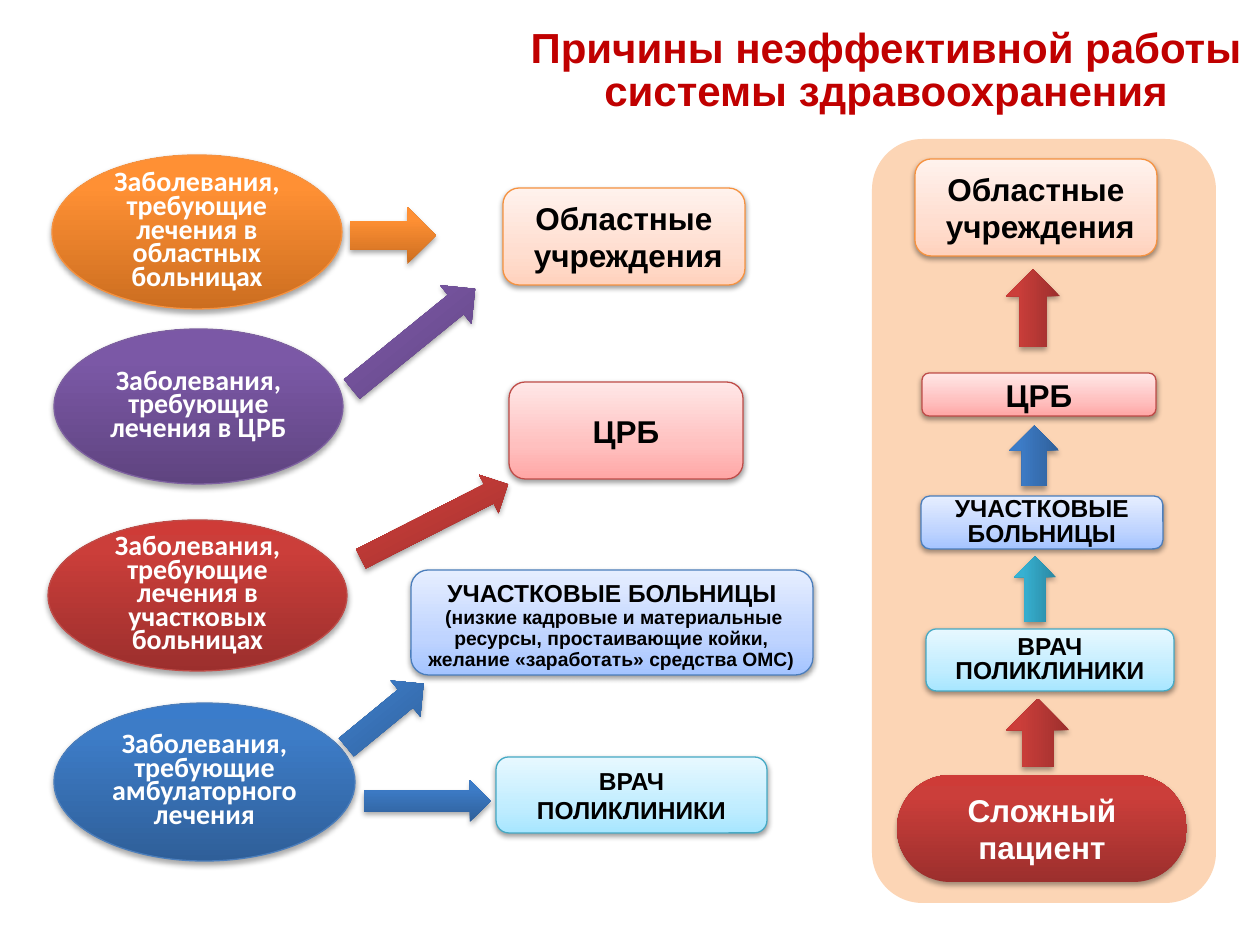
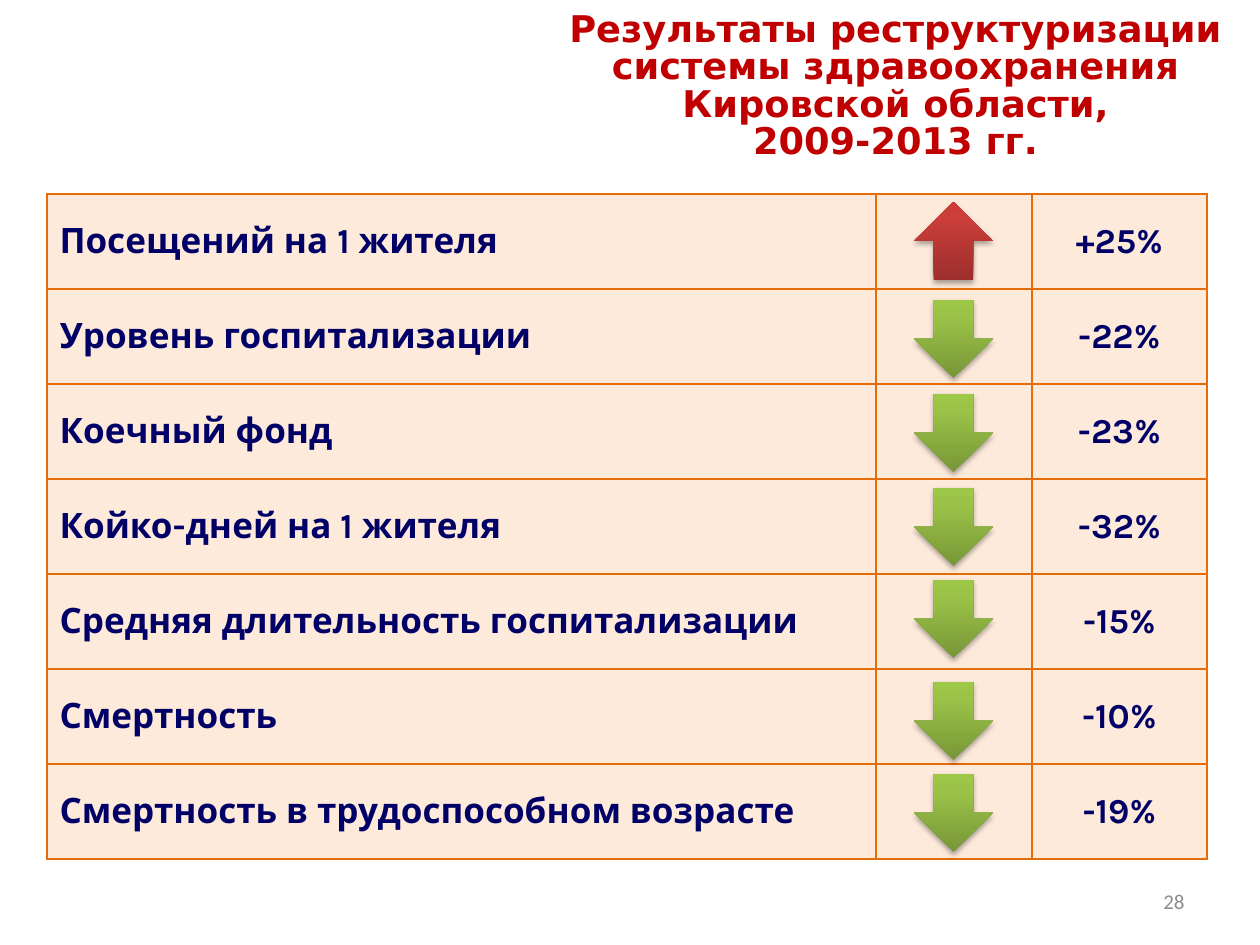
import copy

import pptx
import pptx.dml.color
import pptx.enum.shapes
import pptx.enum.text
import pptx.oxml
import pptx.oxml.ns
import pptx.util

RGBColor = pptx.dml.color.RGBColor
SHAPE = pptx.enum.shapes.MSO_SHAPE
ALIGN = pptx.enum.text.PP_ALIGN
ANCHOR = pptx.enum.text.MSO_ANCHOR
Pt = pptx.util.Pt
qn = pptx.oxml.ns.qn

PX = 914400 / 126  # EMU in one px

# Colours
TITLE_RED = RGBColor(0xC0, 0x00, 0x00)
WHITE = RGBColor(0xFF, 0xFF, 0xFF)
BLACK = RGBColor(0x00, 0x00, 0x00)
NAVY = RGBColor(0x00, 0x00, 0x66)
GRAY = RGBColor(0x8C, 0x8C, 0x8C)
PEACH = RGBColor(0xFC, 0xD5, 0xB5)
CELL_PEACH = RGBColor(0xFD, 0xEA, 0xDA)
BORDER_ORANGE = RGBColor(0xE4, 0x6C, 0x0A)


def colors(codes):
    return [RGBColor.from_string(code) for code in codes.split()]


# Gradient stops, from the bottom of a shape to its top
DEEP = {
    "orange": colors("CC6E20 FF9034 FF9136"),
    "purple": colors("5F4480 7B58A6 7C57A8"),
    "red": colors("9C2F2D CB3E3A CE3B37"),
    "blue": colors("2F5F99 3D7CC7 3A7CCB"),
    "teal": colors("2A88A2 37B1D2 34B4D6"),
    "green": colors("779737 9BC348 9DC746"),
}
PALE = {
    "orange": colors("FFD2BD FFDED0 FFF2ED"),
    "red": colors("FFA6A5 FFC0BF FFE7E7"),
    "blue": colors("A4C4FF BFD4FF E6EEFF"),
    "teal": colors("A7E6FF C1EDFF E7F8FF"),
}
OUTLINE = dict(zip(("orange", "purple", "red", "blue", "teal"),
                   colors("F69240 7D60A0 BF4C48 4B7EBC 46AAC5")))

# Slide 1: boxes are left, top, width, height in px
CAUSES_TITLE = ["Причины неэффективной работы системы здравоохранения"]
PANEL_BOX = (872, 139, 344, 764)
DISEASES = [
    ((54, 703, 301, 158), "blue", "Заболевания, требующие амбулаторного лечения"),
    ((48, 520, 299, 151), "red", "Заболевания, требующие лечения в участковых больницах"),
    ((54, 329, 289, 155), "purple", "Заболевания, требующие лечения в ЦРБ"),
    ((52, 155, 290, 154), "orange", "Заболевания, требующие лечения в областных больницах"),
]
FLOW_ARROWS = [  # box, colour, rotation
    ((350, 207, 86, 57), "orange", 0),
    ((334, 314, 159, 50), "purple", 320.9),
    ((352, 500, 165, 43), "red", 333.1),
    ((335, 692, 100, 47), "blue", 320.6),
    ((364, 780, 127, 42), "blue", 0),
    ((994, 281, 78, 54), "red", 270),
    ((1004, 431, 61, 50), "blue", 270),
    ((1002, 568, 66, 42), "teal", 270),
    ((1004, 701, 68, 63), "red", 270),
]
PATIENT_BOX = (897, 775, 290, 107)
REGIONAL = ["Областные", " учреждения"]
DISTRICT = ["УЧАСТКОВЫЕ БОЛЬНИЦЫ"]
DOCTOR = ["ВРАЧ\nПОЛИКЛИНИКИ"]
FACILITIES = [  # box, colour, paragraphs, text size, line spacing
    ((503, 188, 242, 97), "orange", REGIONAL, 18, None),
    ((509, 382, 234, 97), "red", ["ЦРБ"], 18, None),
    ((496, 757, 271, 76), "teal", DOCTOR, 14, None),
    ((926, 629, 248, 62), "teal", DOCTOR, 14, Pt(14)),
    ((915, 159, 242, 97), "orange", REGIONAL, 18, None),
    ((922, 373, 234, 43), "red", ["ЦРБ"], 18, None),
    ((921, 496, 242, 53), "blue", DISTRICT, 14, Pt(14)),
]
DISTRICT_BOX = (411, 570, 402, 105)
DISTRICT_NOTE_BOX = (410, 601, 403, 77)
DISTRICT_NOTE = [" (низкие кадровые и материальные ресурсы, простаивающие койки, "
                 "желание «заработать» средства ОМС)"]

# Slide 2
RESULTS_TITLE = ["Результаты реструктуризации системы здравоохранения Кировской области,",
                 "2009-2013 гг."]
RESULTS = [  # indicator, change, gap from row top to arrow
    ("Посещений на 1 жителя", "+25%", 8),
    ("Уровень госпитализации", "-22%", 11),
    ("Коечный фонд", "-23%", 10),
    ("Койко-дней на 1 жителя", "-32%", 9),
    ("Средняя длительность госпитализации", "-15%", 6),
    ("Смертность", "-10%", 13),
    ("Смертность в трудоспособном возрасте", "-19%", 10),
]
TABLE_LEFT, TABLE_TOP, ROW_HEIGHT = 47, 194, 95
COLUMN_WIDTHS = (829, 156, 175)
ARROW_WIDTH, ARROW_HEIGHT = 79, 78


def px(value):
    return round(value * PX)


def write(frame, paragraphs, size, color, font="Arial", bold=True,
          align=ALIGN.CENTER, anchor=ANCHOR.MIDDLE, spacing=None):
    frame.word_wrap = True
    frame.vertical_anchor = anchor
    for index, text in enumerate(paragraphs):
        paragraph = frame.add_paragraph() if index else frame.paragraphs[0]
        paragraph.alignment = align
        if spacing:
            paragraph.line_spacing = spacing
        for number, line in enumerate(text.split("\n")):
            if number:
                paragraph.add_line_break()
            run = paragraph.add_run()
            run.text = line
            run.font.name = font
            run.font.size = Pt(size)
            run.font.bold = bold
            run.font.color.rgb = color


def add_text(slide, box, paragraphs, size, color, **style):
    shape = slide.shapes.add_textbox(*map(px, box))
    write(shape.text_frame, paragraphs, size, color, **style)


def add_title(slide, box, paragraphs, size, **style):
    add_text(slide, box, paragraphs, size, TITLE_RED, spacing=0.85, **style)


def add_plain(slide, kind, box):
    shape = slide.shapes.add_shape(kind, *map(px, box))
    shape.shadow.inherit = False
    shape.line.fill.background()
    return shape


def add_glossy(slide, kind, box, stops, middle=0.8, outline=None, shadow=(35, 23000)):
    """Shape with a three-stop vertical gradient and a soft shadow below."""
    shape = add_plain(slide, kind, box)
    shape.fill.gradient()
    shape.fill.gradient_angle = 90
    stop_list = shape.element.spPr.find(qn("a:gradFill")).find(qn("a:gsLst"))
    stop_list.append(copy.deepcopy(stop_list[0]))
    for stop, position, color in zip(shape.fill.gradient_stops, (0, middle, 1), stops):
        stop.position = position
        stop.color.rgb = color
    if outline:
        shape.line.color.rgb = outline
        shape.line.width = Pt(0.75)
    opacity, distance = shadow
    shape.element.spPr.find(qn("a:effectLst")).append(pptx.oxml.parse_xml(
        f'<a:outerShdw {pptx.oxml.ns.nsdecls("a")} blurRad="40000" dist="{distance}" '
        f'dir="5400000" rotWithShape="0"><a:srgbClr val="000000">'
        f'<a:alpha val="{opacity * 1000}"/></a:srgbClr></a:outerShdw>'))
    return shape


def add_facility(slide, box, color):
    return add_glossy(slide, SHAPE.ROUNDED_RECTANGLE, box, PALE[color], 0.35,
                      OUTLINE[color], (38, 20000))


def add_borders(cell):
    properties = cell._tc.get_or_add_tcPr()
    for index, side in enumerate(("lnL", "lnR", "lnT", "lnB")):
        properties.insert(index, pptx.oxml.parse_xml(
            f'<a:{side} {pptx.oxml.ns.nsdecls("a")} w="12700"><a:solidFill>'
            f'<a:srgbClr val="{BORDER_ORANGE}"/></a:solidFill></a:{side}>'))


def build_causes(slide):
    panel = add_plain(slide, SHAPE.ROUNDED_RECTANGLE, PANEL_BOX)
    panel.adjustments[0] = 0.147
    panel.fill.solid()
    panel.fill.fore_color.rgb = PEACH

    # Groups of diseases and the patient flows
    for box, color, text in DISEASES:
        ellipse = add_glossy(slide, SHAPE.OVAL, box, DEEP[color], outline=OUTLINE[color])
        write(ellipse.text_frame, [text], 16, WHITE, font="Calibri", spacing=0.7)
    for box, color, rotation in FLOW_ARROWS:
        add_glossy(slide, SHAPE.RIGHT_ARROW, box, DEEP[color]).rotation = rotation

    add_title(slide, (512, 0, 748, 145), CAUSES_TITLE, 24)

    # Patient and medical facilities
    patient = add_glossy(slide, SHAPE.ROUNDED_RECTANGLE, PATIENT_BOX, DEEP["red"])
    patient.adjustments[0] = 0.5
    write(patient.text_frame, ["Сложный\nпациент"], 18, WHITE)
    for box, color, paragraphs, size, spacing in FACILITIES:
        facility = add_facility(slide, box, color)
        write(facility.text_frame, paragraphs, size, BLACK, spacing=spacing)

    # District hospitals with a note under the heading
    district = add_facility(slide, DISTRICT_BOX, "blue")
    district.text_frame.margin_top = px(3)
    write(district.text_frame, DISTRICT, 14, BLACK, anchor=ANCHOR.TOP)
    add_text(slide, DISTRICT_NOTE_BOX, DISTRICT_NOTE, 11, BLACK,
             anchor=ANCHOR.TOP, spacing=Pt(12))


def build_results(slide):
    add_text(slide, (903, 876, 294, 50), ["28"], 12, GRAY, font="Calibri",
             bold=False, align=ALIGN.RIGHT)

    # Table of indicators
    table = slide.shapes.add_table(
        len(RESULTS), len(COLUMN_WIDTHS), px(TABLE_LEFT), px(TABLE_TOP),
        px(sum(COLUMN_WIDTHS)), px(ROW_HEIGHT * len(RESULTS))).table
    table.first_row = table.horz_banding = False
    for column, width in zip(table.columns, COLUMN_WIDTHS):
        column.width = px(width)
    for row, (indicator, change, _) in enumerate(RESULTS):
        table.rows[row].height = px(ROW_HEIGHT)
        for column, (text, align) in enumerate(
                ((indicator, ALIGN.LEFT), ("", ALIGN.CENTER), (change, ALIGN.CENTER))):
            cell = table.cell(row, column)
            cell.fill.solid()
            cell.fill.fore_color.rgb = CELL_PEACH
            cell.vertical_anchor = ANCHOR.MIDDLE
            if text:
                write(cell.text_frame, [text], 20, NAVY, font="Karla", align=align,
                      anchor=None)
            add_borders(cell)

    add_title(slide, (541, 6, 709, 164), RESULTS_TITLE, 21, font="DejaVu Sans",
              anchor=ANCHOR.TOP)

    # Arrows centred in the middle column
    arrow_left = TABLE_LEFT + COLUMN_WIDTHS[0] + (COLUMN_WIDTHS[1] - ARROW_WIDTH) // 2
    for row, (_, change, gap) in enumerate(RESULTS):
        rising = change.startswith("+")
        box = (arrow_left, TABLE_TOP + row * ROW_HEIGHT + gap, ARROW_WIDTH, ARROW_HEIGHT)
        add_glossy(slide, SHAPE.UP_ARROW if rising else SHAPE.DOWN_ARROW, box,
                   DEEP["red" if rising else "green"])


def main():
    presentation = pptx.Presentation()
    presentation.slide_width = px(1260)
    presentation.slide_height = px(945)
    for build in (build_causes, build_results):
        build(presentation.slides.add_slide(presentation.slide_layouts[6]))
    presentation.save("out.pptx")


if __name__ == "__main__":
    main()
